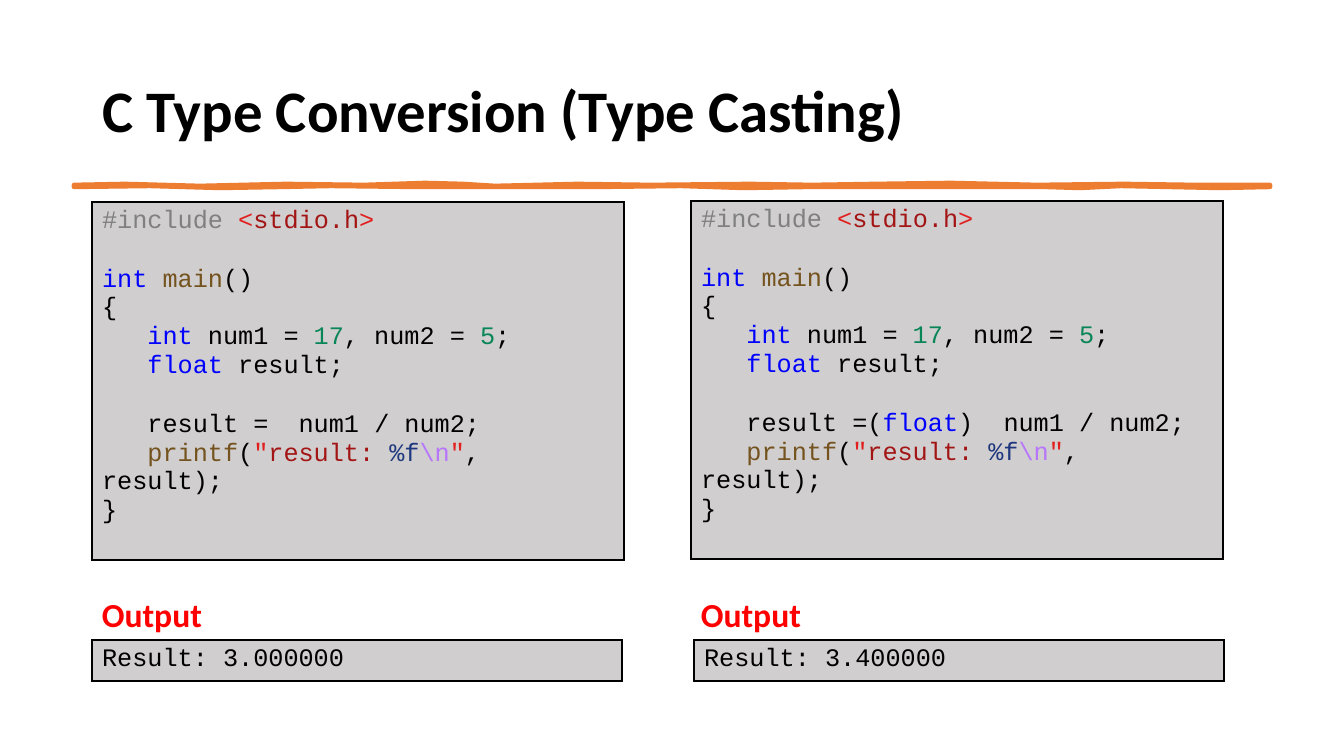
from lxml.etree import SubElement
from pptx import Presentation
from pptx.dml.color import RGBColor
from pptx.enum.text import MSO_ANCHOR as Anchor, MSO_AUTO_SIZE as AutoSize, PP_ALIGN as Align
from pptx.oxml.ns import qn
from pptx.util import Pt

EMU_PER_PX = 914400 / 100.8
BLANK_LINE = 22
ORANGE, RED, BLACK, GREY = "ED7D31", "FF0000", "000000", "D0CECE"
SYNTAX = {
    "plain": BLACK, "directive": "808080", "quote": "E21F1F", "string": "A31515",
    "keyword": "0000FF", "function": "74531F", "number": "098658",
    "format": "1F377F", "escape": "B776FB",
}
RULE_TOP = [
    (74, 185), (125, 184), (200, 186), (286, 184), (364, 185), (425, 183), (463, 184),
    (495, 186), (537, 185), (577, 184), (651, 185), (750, 184), (812, 185), (875, 184),
    (951, 183), (1037, 185), (1124, 184), (1195, 185), (1270, 185),
]
RULE_BOTTOM = [
    (1270, 187), (1220, 188), (1121, 186), (1080, 188), (1046, 187), (932, 187),
    (806, 187), (744, 188), (681, 186), (595, 187), (519, 187), (417, 187),
    (331, 186), (280, 187), (220, 188), (150, 186), (74, 187),
]


def px(length):
    return round(length * EMU_PER_PX)


def color(hex_string):
    return RGBColor.from_string(hex_string)


def program(assignment):
    """Return the C listing as blocks of lines, each line a list of (text, kind)."""
    return [
        [[("#include ", "directive"), ("<", "quote"), ("stdio.h", "string"), (">", "quote")]],
        [
            [("int ", "keyword"), ("main", "function"), ("()", "plain")],
            [("{", "plain")],
            [("   ", "plain"), ("int", "keyword"), (" num1 = ", "plain"), ("17", "number"),
             (", num2 = ", "plain"), ("5", "number"), (";", "plain")],
            [("   ", "plain"), ("float", "keyword"), (" result;", "plain")],
        ],
        [
            assignment,
            [("   ", "plain"), ("printf", "function"), ("(", "plain"), ('"', "quote"),
             ("result: ", "string"), ("%f", "format"), ("\\n", "escape"), ('"', "quote"),
             (", result);", "plain")],
            [("}", "plain")],
        ],
    ]


class SlideBuilder:
    heading_font = "Calibri"
    code_font = "Courier New"
    code_size = 18

    def __init__(self, page):
        self.page = page

    def style(self, span, font, size, hex_string, bold=False):
        span.font.name = font
        span.font.size = Pt(size)
        span.font.bold = bold
        span.font.color.rgb = color(hex_string)

    def title(self, text, left, top, width, height):
        box = self.page.shapes.title
        box.left, box.top, box.width, box.height = map(px, (left, top, width, height))
        frame = box.text_frame
        frame.text = text
        frame.auto_size = AutoSize.NONE
        frame.vertical_anchor = Anchor.MIDDLE
        para = frame.paragraphs[0]
        para.alignment = Align.LEFT
        para.line_spacing = 0.9
        self.style(para.runs[0], self.heading_font, 42, BLACK, bold=True)

    def rule(self, points):
        """Draw the closed, hand-drawn band below the title."""
        start, *others = points
        outline = self.page.shapes.build_freeform(*start, scale=EMU_PER_PX)
        outline.add_line_segments(others, close=True)
        band = outline.convert_to_shape()
        band.shadow.inherit = False
        band.fill.solid()
        band.fill.fore_color.rgb = color(ORANGE)
        band.line.color.rgb = color(ORANGE)
        band.line.width = Pt(3.25)

    def label(self, text, left, top, width, height):
        box = self.page.shapes.add_textbox(*map(px, (left, top, width, height)))
        frame = box.text_frame
        frame.word_wrap = True
        frame.text = text
        self.style(frame.paragraphs[0].runs[0], self.heading_font, 24, RED, bold=True)

    def borders(self, cell):
        properties = cell._tc.get_or_add_tcPr()
        for side in ("a:lnL", "a:lnR", "a:lnT", "a:lnB"):
            line = SubElement(properties, qn(side), w=str(Pt(1)))
            fill = SubElement(line, qn("a:solidFill"))
            SubElement(fill, qn("a:srgbClr"), val=BLACK)

    def code_table(self, blocks, left, top, width, height):
        """Show blocks of code in a one-cell table, a blank line between blocks."""
        table = self.page.shapes.add_table(1, 1, *map(px, (left, top, width, height))).table
        table.first_row = table.horz_banding = False
        cell = table.cell(0, 0)
        self.borders(cell)
        cell.fill.solid()
        cell.fill.fore_color.rgb = color(GREY)
        frame = cell.text_frame
        para = frame.paragraphs[0]
        for block_index, block in enumerate(blocks):
            for line_index, line in enumerate(block):
                if block_index or line_index:
                    para = frame.add_paragraph()
                if block_index and not line_index:
                    para.space_before = Pt(BLANK_LINE)
                for text, kind in line:
                    span = para.add_run()
                    span.text = text
                    self.style(span, self.code_font, self.code_size, SYNTAX[kind])


def main():
    deck = Presentation()
    deck.slide_width, deck.slide_height = px(1344), px(756)
    builder = SlideBuilder(deck.slides.add_slide(deck.slide_layouts[5]))
    builder.title("C Type Conversion (Type Casting)", 92, 40, 1159, 146)
    builder.rule(RULE_TOP + RULE_BOTTOM)

    integer_division = [("   result =  num1 / num2;", "plain")]
    cast_division = [("   result =(", "plain"), ("float", "keyword"),
                     (")  num1 / num2;", "plain")]
    examples = [
        (integer_division, "Result: 3.000000", 92, 202, 92),
        (cast_division, "Result: 3.400000", 691, 201, 694),
    ]
    for assignment, result, left, top, result_left in examples:
        builder.code_table(program(assignment), left, top, 532, 358)
        builder.label("Output", left, 589, 352, 50)
        builder.code_table([[[(result, "plain")]]], result_left, 640, 530, 41)
    deck.save("out.pptx")


if __name__ == "__main__":
    main()
